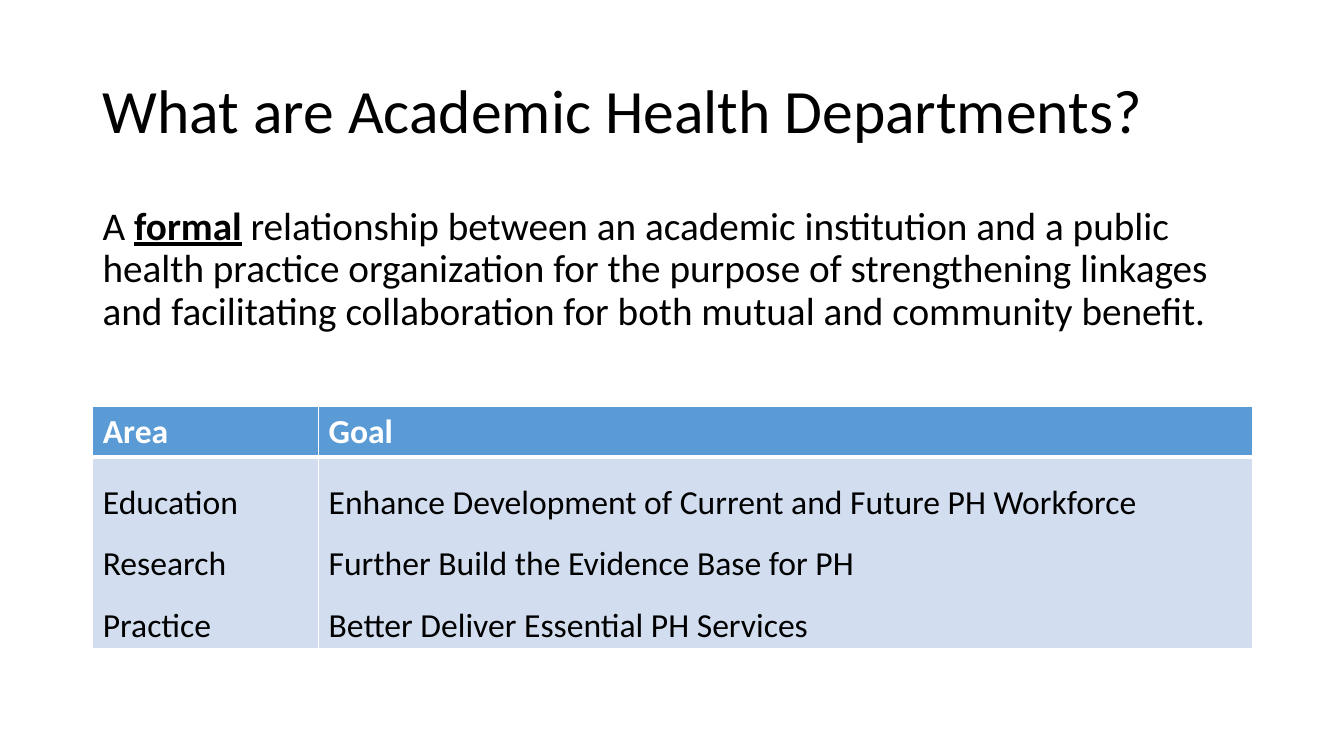
from lxml.etree import SubElement
from pptx import Presentation
from pptx.dml.color import RGBColor
from pptx.enum.text import MSO_ANCHOR, PP_ALIGN
from pptx.oxml.ns import qn
from pptx.util import Inches, Pt

COLORS = {"black": "000000", "white": "FFFFFF", "header": "5B9BD5", "body": "D2DEEF"}
LEFT, WIDTH = Inches(0.92), Inches(11.5)


def style_run(r, size, color="black", bold=False):
    r.font.name = "Calibri"
    r.font.size = Pt(size)
    r.font.bold = bold
    r.font.color.rgb = RGBColor.from_string(COLORS[color])


def add_borders(cell, widths):
    tcPr = cell._tc.get_or_add_tcPr()
    for i, (side, width) in enumerate(widths.items()):
        ln = SubElement(tcPr, qn(f"a:ln{side}"), w=str(Pt(width)))
        fill = SubElement(ln, qn("a:solidFill"))
        SubElement(fill, qn("a:srgbClr"), val=COLORS["white"])
        tcPr.insert(i, ln)


prs = Presentation()
prs.slide_width, prs.slide_height = Inches(13.33), Inches(7.5)
s = prs.slides.add_slide(prs.slide_layouts[5])

# Title
title = s.shapes.title
title.left, title.top, title.width, title.height = LEFT, Inches(0.4), WIDTH, Inches(1.45)
tf = title.text_frame
tf.text = "What are Academic Health Departments?"
tf.vertical_anchor = MSO_ANCHOR.MIDDLE
p = tf.paragraphs[0]
p.alignment = PP_ALIGN.LEFT
p.line_spacing = 0.9
style_run(p.runs[0], 44)

# Definition
tf = s.shapes.add_textbox(LEFT, Inches(2), WIDTH, Inches(1.5)).text_frame
tf.word_wrap = True
p = tf.paragraphs[0]
p.line_spacing = 0.9
p.space_before = Pt(10)
for text, strong in [
    ("A ", False),
    ("formal", True),
    (" relationship between an academic institution and a public health practice "
     "organization for the purpose of strengthening linkages and facilitating "
     "collaboration for both mutual and community benefit.", False),
]:
    r = p.add_run()
    r.text = text
    style_run(r, 28, bold=strong)
    r.font.underline = strong

# Areas and goals
rows = [
    ("Area", "Goal"),
    ("Education\nResearch\nPractice",
     "Enhance Development of Current and Future PH Workforce\n"
     "Further Build the Evidence Base for PH\n"
     "Better Deliver Essential PH Services"),
]
table = s.shapes.add_table(2, 2, LEFT, Inches(4.03), WIDTH, Inches(2.4)).table
for column, width in zip(table.columns, (2.24, 9.26)):
    column.width = Inches(width)
for row, height in zip(table.rows, (0.5, 1.9)):
    row.height = Inches(height)

for i, texts in enumerate(rows):
    header = i == 0
    for j, text in enumerate(texts):
        cell = table.cell(i, j)
        cell.text_frame.text = text
        cell.fill.solid()
        cell.fill.fore_color.rgb = RGBColor.from_string(COLORS["header" if header else "body"])
        add_borders(cell, {"L": 1, "R": 1, "T": 1 if header else 3, "B": 3 if header else 1})
        for p in cell.text_frame.paragraphs:
            p.line_spacing = 1.0 if header else 1.5
            style_run(p.runs[0], 24, "white" if header else "black", bold=header)

prs.save("out.pptx")
